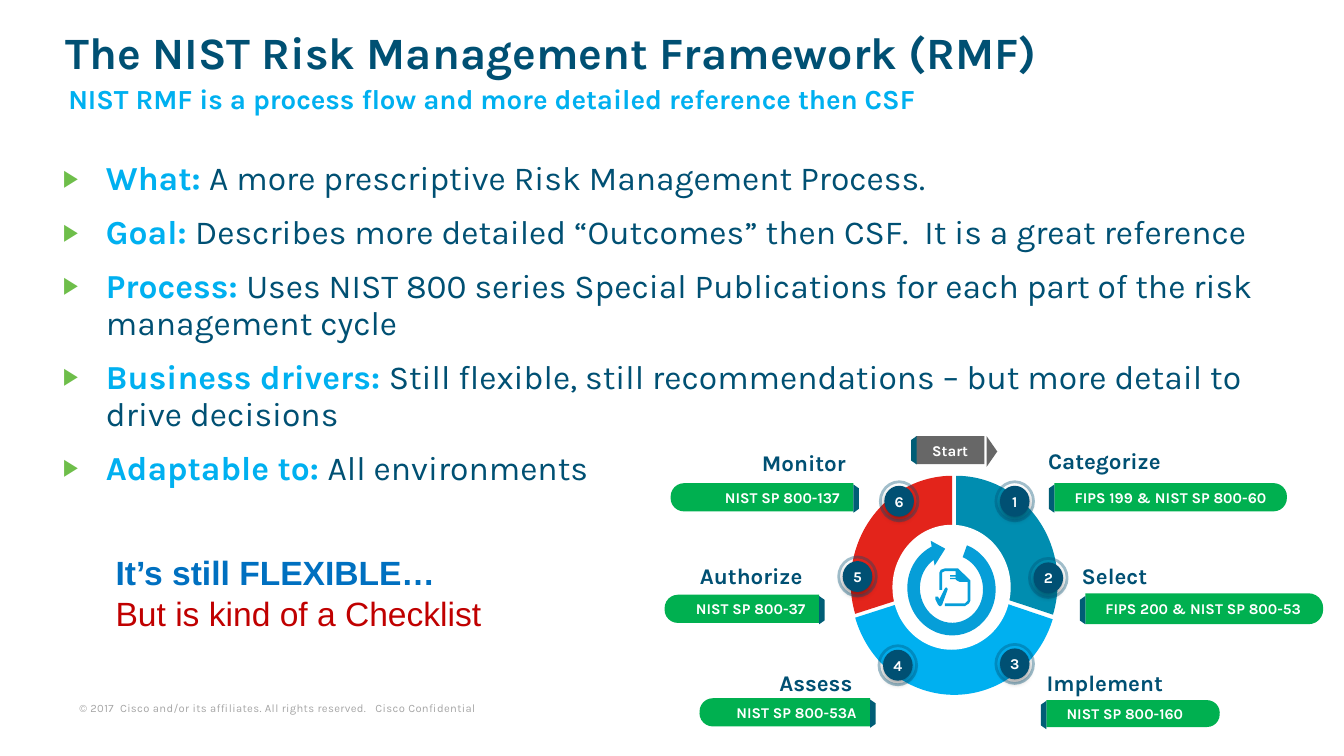
from lxml import etree
from pptx import Presentation
from pptx.dml.color import RGBColor
from pptx.enum.shapes import MSO_SHAPE
from pptx.enum.text import MSO_ANCHOR, PP_ALIGN
from pptx.oxml.ns import qn
from pptx.util import Inches, Pt

LEFT, CENTER, RIGHT = PP_ALIGN.LEFT, PP_ALIGN.CENTER, PP_ALIGN.RIGHT
TOP, MIDDLE, BOTTOM = MSO_ANCHOR.TOP, MSO_ANCHOR.MIDDLE, MSO_ANCHOR.BOTTOM
OVAL, PIE, BOX = MSO_SHAPE.OVAL, MSO_SHAPE.PIE, MSO_SHAPE.RECTANGLE
PILL, CAP = MSO_SHAPE.ROUND_2_SAME_RECTANGLE, MSO_SHAPE.TRAPEZOID
TRIANGLE, CIRCULAR_ARROW = MSO_SHAPE.ISOSCELES_TRIANGLE, MSO_SHAPE.CIRCULAR_ARROW

NAVY, SKY, WHITE, GREEN = "005073", "00B0F0", "FFFFFF", "00B050"
GREY, CAP_BLUE, ICON_BLUE = "676767", "005E76", "069ED8"

TITLE = "The NIST Risk Management Framework (RMF)"
SUBTITLE = "NIST RMF is a process flow and more detailed reference then CSF"
COPYRIGHT = "© 2017  Cisco and/or its affiliates. All rights reserved.   Cisco Confidential"
POINTS = [
    ("What: ", "A more prescriptive Risk Management Process."),
    ("Goal: ", "Describes more detailed “Outcomes” then CSF.  It is a great reference"),
    ("Process: ", "Uses NIST 800 series Special Publications for each part of the risk management cycle"),
    ("Business drivers: ", "Still flexible, still recommendations – but more detail to drive decisions"),
    ("Adaptable to: ", "All environments"),
]
VERDICT = [("It’s still FLEXIBLE…", "0070C0", True),
           ("But is kind of a Checklist", "C00000", False)]

# name, publication, dot centre, label (left, middle, width), pill (centre x, centre y, length, height)
STEPS = [
    ("Categorize", "FIPS 199 & NIST SP 800-60", (7.55, 3.73), (7.7, 3.44, 2.07), (8.71, 3.7, 1.73, 0.21)),
    ("Select", "FIPS 200 & NIST SP 800-53", (7.8, 4.3), (7.95, 4.29, 1.42), (8.96, 4.53, 1.77, 0.23)),
    ("Implement", "NIST SP 800-160", (7.55, 4.94), (7.69, 5.09, 1.53), (8.43, 5.31, 1.29, 0.2)),
    ("Assess", "NIST SP 800-53A", (6.68, 4.95), (5.7, 5.09, 0.95), (5.84, 5.3, 1.27, 0.21)),
    ("Authorize", "NIST SP 800-37", (6.38, 4.29), (5.11, 4.29, 1.12), (5.52, 4.53, 1.15, 0.21)),
    ("Monitor", "NIST SP 800-137", (6.69, 3.73), (5.57, 3.45, 0.98), (5.67, 3.7, 1.36, 0.21)),
]
# left, top, width, height, start and end in degrees, colour
SECTORS = [
    (6.36, 3.54, 1.51, 1.59, 270, 18.33, "008DB0"),
    (6.33, 3.54, 1.51, 1.59, 162.17, 270, "E3241B"),
    (6.33, 3.55, 1.54, 1.62, 18.68, 162.22, SKY),
]
# outlines in hundredths of an inch
DOCUMENT = [(703, 423), (713, 423), (722, 432), (722, 447), (721, 449), (718, 451),
            (703, 451), (703, 449), (718, 449), (720, 447), (720, 433), (714, 433),
            (712, 432), (711, 431), (707, 431), (707, 430), (711, 430), (711, 429),
            (707, 429), (707, 428), (711, 428), (711, 425), (703, 425), (701, 426),
            (701, 439), (699, 439), (699, 426), (700, 424)]
CHECK = [(704, 437), (705, 438), (705, 439), (701, 450), (700, 451), (699, 451),
         (698, 450), (696, 446), (696, 444), (698, 444), (699, 446), (703, 438)]

prs = Presentation()
prs.slide_width = Inches(10)
prs.slide_height = prs.slide_width * 9 // 16
slide = prs.slides.add_slide(prs.slide_layouts[6])


def rgb(value):
    return RGBColor.from_string(value)


def add_xml(parent, tag, **attributes):
    return etree.SubElement(parent, qn(tag), attributes)


def write(paragraph, text, size, color, bold=True, font="Karla"):
    run = paragraph.add_run()
    run.text = text
    run.font.size, run.font.bold, run.font.name = Pt(size), bold, font
    run.font.color.rgb = rgb(color)
    return run


def set_frame(shape, anchor, insets=(0.1, 0.05)):
    frame = shape.text_frame
    frame.word_wrap, frame.vertical_anchor = True, anchor
    frame.margin_left = frame.margin_right = Inches(insets[0])
    frame.margin_top = frame.margin_bottom = Inches(insets[1])
    return frame


def text_box(left, top, width, height, anchor=TOP, insets=(0.1, 0.05)):
    box = slide.shapes.add_textbox(*map(Inches, (left, top, width, height)))
    return set_frame(box, anchor, insets)


def paint(shape, fill):
    shape.shadow.inherit = False
    shape.line.fill.background()
    if fill:
        shape.fill.solid()
        shape.fill.fore_color.rgb = rgb(fill)
    else:
        shape.fill.background()
    return shape


def centred(kind, x, y, width, height, fill, turn=0, adjust=()):
    shape = slide.shapes.add_shape(
        kind, *map(Inches, (x - width / 2, y - height / 2, width, height)))
    shape.rotation = turn
    for index, value in enumerate(adjust):
        shape.adjustments[index] = value
    return paint(shape, fill)


def outline(points):
    builder = slide.shapes.build_freeform(*points[0], scale=Inches(0.01))
    builder.add_line_segments(points[1:], close=True)
    paint(builder.convert_to_shape(), ICON_BLUE)


def add_dot(number, x, y):
    dot = centred(OVAL, x, y, 0.22, 0.23, NAVY)
    effects = dot.element.spPr.find(qn("a:effectLst"))
    shadow = add_xml(effects, "a:outerShdw", blurRad=str(Pt(3.1)), dist=str(Pt(1.8)),
                     dir="5400000", algn="t", rotWithShape="0")
    add_xml(add_xml(shadow, "a:srgbClr", val="000000"), "a:alpha", val="35000")
    label = set_frame(dot, MIDDLE, (0, 0)).paragraphs[0]
    label.alignment = CENTER
    write(label, str(number), 8, WHITE)
    halo = centred(OVAL, x, y, 0.28, 0.29, None)
    halo.line.color.rgb, halo.line.width = rgb(NAVY), Pt(1.5)
    add_xml(next(halo.line._ln.iter(qn("a:srgbClr"))), "a:alpha", val="37000")


def add_step(number, name, publication, dot, label, pill):
    add_dot(number, *dot)
    left, middle, width = label
    heading = text_box(left, middle - 0.2, width, 0.4, MIDDLE).paragraphs[0]
    heading.line_spacing = 0.95
    write(heading, name, 12, NAVY)
    x, y, length, height = pill
    side = 1 if number <= 3 else -1
    turn = 90 if side == 1 else 270
    tag = centred(PILL, x, y, height, length, GREEN, turn, (0.47, 0))
    frame = set_frame(tag, MIDDLE, (0.1, 0.1))
    frame._txBody.bodyPr.set("vert", "vert270" if side == 1 else "vert")
    line = frame.paragraphs[0]
    line.alignment = LEFT if side == 1 else RIGHT
    line._p.get_or_add_pPr().set("marL", str(Inches(0.05)))
    write(line, publication, 8, WHITE)
    centred(CAP, x - side * (length / 2 + 0.02), y + 0.01, 0.21, 0.04, CAP_BLUE, 360 - turn, (0.7,))


def add_points():
    frame = text_box(0.37, 1.15, 9.55, 2.83)
    for index, (lead, detail) in enumerate(POINTS):
        item = frame.add_paragraph() if index else frame.paragraphs[0]
        item.line_spacing, item.space_after = 0.92, Pt(3)
        if index:
            item.space_before = Pt(6)
        props = item._p.get_or_add_pPr()
        props.set("marL", str(Inches(0.32)))
        props.set("indent", str(-Inches(0.32)))
        add_xml(add_xml(props, "a:buClr"), "a:srgbClr", val="6EBE4A")
        add_xml(props, "a:buSzPct", val="70000")
        add_xml(props, "a:buFont", typeface="Arial")
        add_xml(props, "a:buChar", char="▶")
        write(item, lead, 18, SKY)
        write(item, detail, 18, NAVY, False)


def main():
    """Build the risk management framework slide and save it."""
    notice = text_box(0.52, 5.18, 3.72, 0.17, BOTTOM, (0.07, 0.03)).paragraphs[0]
    write(notice, COPYRIGHT, 6, "A6A6A6", False).font._element.set("spc", "20")
    title = text_box(0.39, 0.17, 9.31, 0.48, MIDDLE).paragraphs[0]
    title.line_spacing = 0.9
    write(title, TITLE, 24, NAVY)
    subtitle = text_box(0.41, 0.6, 8.86, 0.31).paragraphs[0]
    subtitle.line_spacing = 0.85
    write(subtitle, SUBTITLE, 14.8, SKY)
    add_points()
    verdict = text_box(0.86, 4.11, 3.45, 0.61, TOP, (0, 0))
    for index, (text, color, bold) in enumerate(VERDICT):
        line = verdict.add_paragraph() if index else verdict.paragraphs[0]
        write(line, text, 18, color, bold, "Arial")

    for left, top, width, height, start, end, color in SECTORS:
        centred(PIE, left + width / 2, top + height / 2, width, height, color,
                adjust=(start * 0.6, end * 0.6))
    centred(OVAL, 7.08, 4.37, 0.88, 0.93, WHITE)
    centred(CIRCULAR_ARROW, 7.08, 4.38, 0.79, 0.75, ICON_BLUE, 261.1,
            (0.125, 11.42, 204.58, 17.1, 0.125))
    outline(DOCUMENT)
    outline(CHECK)
    for number, step in enumerate(STEPS, 1):
        add_step(number, *step)

    start = centred(BOX, 7.07, 3.35, 0.51, 0.21, GREY)
    label = set_frame(start, MIDDLE).paragraphs[0]
    label.alignment = CENTER
    write(label, "Start", 8, WHITE)
    centred(TRIANGLE, 7.38, 3.36, 0.23, 0.08, GREY, 90)
    centred(CAP, 6.8, 3.35, 0.21, 0.04, CAP_BLUE, 270, (0.7,))
    prs.save("out.pptx")


if __name__ == "__main__":
    main()
